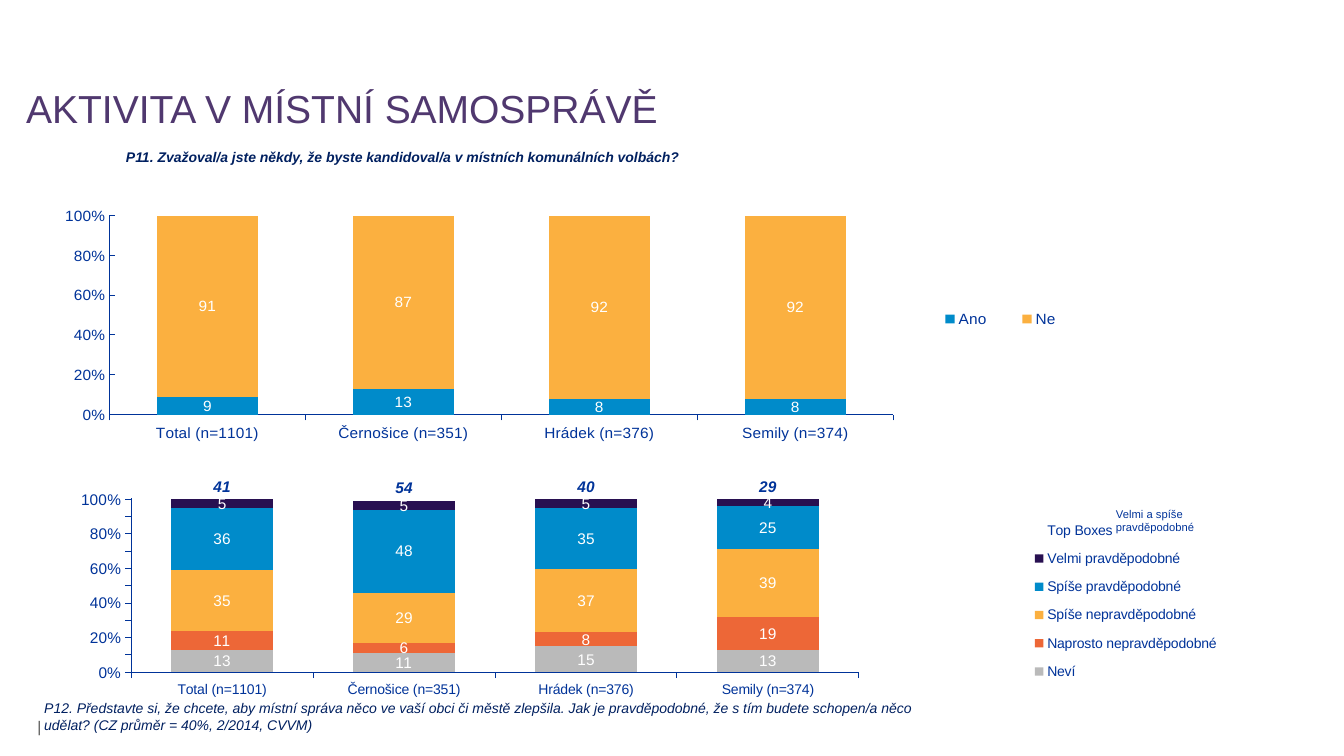
from dataclasses import dataclass

from lxml import etree
from pptx import Presentation
from pptx.chart.data import CategoryChartData
from pptx.dml.color import RGBColor
from pptx.enum.chart import XL_CHART_TYPE, XL_LABEL_POSITION, XL_LEGEND_POSITION, XL_TICK_MARK
from pptx.enum.text import MSO_ANCHOR, PP_ALIGN
from pptx.oxml.ns import qn
from pptx.util import Inches, Pt

STACKED = XL_CHART_TYPE.COLUMN_STACKED
STACKED_100 = XL_CHART_TYPE.COLUMN_STACKED_100
CENTER, INSIDE_BASE = XL_LABEL_POSITION.CENTER, XL_LABEL_POSITION.INSIDE_BASE
LEGEND_TOP, LEGEND_RIGHT = XL_LEGEND_POSITION.TOP, XL_LEGEND_POSITION.RIGHT
TICK_IN, TICK_OUT, TICK_NONE = XL_TICK_MARK.INSIDE, XL_TICK_MARK.OUTSIDE, XL_TICK_MARK.NONE
TOP, LEFT = MSO_ANCHOR.TOP, PP_ALIGN.LEFT
FONT = "Arial"
BLUE, NAVY, WHITE = "003399", "002060", "FFFFFF"
TOWNS = ["Total (n=1101)", "Černošice (n=351)", "Hrádek (n=376)", "Semily (n=374)"]

Box = tuple[float, float, float, float]


@dataclass
class Label:
    text: str
    box: Box
    size: float
    color: str
    bold: bool = False
    italic: bool = False
    insets: Box = (0.1, 0.05, 0.1, 0.05)
    wrap: bool = True


@dataclass
class Answer:
    name: str
    values: list[int]
    color: str | None


@dataclass
class StackedChart:
    kind: int
    box: Box
    plot: Box
    legend: Box
    legend_position: int
    answers: list[Answer]
    gap: int
    maximum: float
    step: float
    axis_format: str
    value_tick: int
    category_size: float
    legend_size: float


LABELS = [
    Label("|", (0.37, 7.11, 0.04, 0.19), 11, "575756", insets=(0, 0, 0, 0), wrap=False),
    Label("P11. Zvažoval/a jste někdy, že byste kandidoval/a v místních komunálních volbách?",
          (1.21, 1.47, 11.5, 0.21), 10, NAVY, bold=True, italic=True, insets=(0.04, 0, 0.04, 0.04)),
    Label("P12. Představte si, že chcete, aby místní správa něco ve vaší obci či městě zlepšila. "
          "Jak je pravděpodobné, že s tím budete schopen/a něco udělat? "
          "(CZ průměr = 40%, 2/2014, CVVM)",
          (0.34, 6.89, 8.92, 0.44), 10, NAVY, italic=True),
    Label("Velmi a spíše pravděpodobné", (10.97, 4.98, 1.31, 0.37), 8, BLUE),
]

CHARTS = [
    StackedChart(
        STACKED_100, (0.34, 1.73, 10.65, 2.65), (0.07, 0.16, 0.73, 0.77),
        (0.82, 0.51, 0.16, 0.1), LEGEND_TOP,
        [Answer("Ano", [9, 13, 8, 8], "008BCA"),
         Answer("Ne", [91, 87, 92, 92], "FBB040")],
        95, 1, 0.2, "0%", TICK_IN, 11, 11),
    StackedChart(
        STACKED, (0.58, 4.62, 12.03, 2.44), (0.06, 0.13, 0.6, 0.71),
        (0.78, 0.18, 0.2, 0.74), LEGEND_RIGHT,
        [Answer("Neví", [13, 11, 15, 13], "BABABA"),
         Answer("Naprosto nepravděpodobné", [11, 6, 8, 19], "ED6737"),
         Answer("Spíše nepravděpodobné", [35, 29, 37, 39], "FBB040"),
         Answer("Spíše pravděpodobné", [36, 48, 35, 25], "008BCA"),
         Answer("Velmi pravděpodobné", [5, 5, 5, 4], "281051"),
         Answer("Top Boxes", [41, 54, 40, 29], None)],
        79, 101, 10, '#,##0"%";\\-#,##0', TICK_OUT, 10, 10),
]


def rgb(value: str) -> RGBColor:
    return RGBColor.from_string(value)


def set_font(font, size: float, color: str, bold: bool = False, italic: bool = False) -> None:
    font.name = FONT
    font.size = Pt(size)
    font.color.rgb = rgb(color)
    font.bold = bold
    font.italic = italic


def fill_text(shape, label: Label) -> None:
    tf = shape.text_frame
    tf.text = label.text
    tf.word_wrap = label.wrap
    tf.vertical_anchor = TOP
    tf.margin_left, tf.margin_top, tf.margin_right, tf.margin_bottom = map(Inches, label.insets)
    p = tf.paragraphs[0]
    p.alignment = LEFT
    set_font(p.runs[0].font, label.size, label.color, label.bold, label.italic)


def manual_layout(parent, box: Box, inner: bool) -> etree._Element:
    for old in parent.findall(qn("c:layout")):
        parent.remove(old)
    layout = etree.Element(qn("c:layout"))
    manual = etree.SubElement(layout, qn("c:manualLayout"))
    entries = [("layoutTarget", "inner")] if inner else []
    entries += [("xMode", "edge"), ("yMode", "edge")]
    entries += list(zip("xywh", map(str, box)))
    for tag, value in entries:
        etree.SubElement(manual, qn(f"c:{tag}")).set("val", value)
    return layout


def style_axis(axis, size: float, tick: int) -> None:
    axis.has_major_gridlines = False
    axis.major_tick_mark = tick
    axis.minor_tick_mark = TICK_NONE
    axis.format.line.color.rgb = rgb(BLUE)
    axis.format.line.width = Pt(0.75)
    set_font(axis.tick_labels.font, size, BLUE)


def style_series(series, answer: Answer) -> None:
    labels = series.data_labels
    labels.show_value = True
    labels.number_format = "#,##0"
    labels.number_format_is_linked = False
    if answer.color:
        series.format.fill.solid()
        series.format.fill.fore_color.rgb = rgb(answer.color)
        labels.position = CENTER
        set_font(labels.font, 11, WHITE)
    else:
        series.format.fill.background()
        labels.position = INSIDE_BASE
        set_font(labels.font, 11, BLUE, bold=True, italic=True)


def add_stacked_chart(s, item: StackedChart) -> None:
    data = CategoryChartData()
    data.categories = TOWNS
    for answer in item.answers:
        data.add_series(answer.name, answer.values)
    chart = s.shapes.add_chart(item.kind, *map(Inches, item.box), data).chart
    chart.has_title = False
    set_font(chart.font, 11, BLUE)

    plot = chart.plots[0]
    plot.gap_width = item.gap
    plot.overlap = 100
    plot.vary_by_categories = False
    for series, answer in zip(plot.series, item.answers):
        style_series(series, answer)

    style_axis(chart.category_axis, item.category_size, TICK_OUT)
    axis = chart.value_axis
    style_axis(axis, 11, item.value_tick)
    axis.minimum_scale = 0
    axis.maximum_scale = item.maximum
    axis.major_unit = item.step
    axis.tick_labels.number_format = item.axis_format
    axis.tick_labels.number_format_is_linked = False

    chart.has_legend = True
    chart.legend.position = item.legend_position
    chart.legend.include_in_layout = False
    set_font(chart.legend.font, item.legend_size, BLUE)

    area = chart.element.find(".//" + qn("c:plotArea"))
    area.insert(0, manual_layout(area, item.plot, True))
    legend = chart.element.find(".//" + qn("c:legend"))
    legend.find(qn("c:legendPos")).addnext(manual_layout(legend, item.legend, False))


def main() -> None:
    prs = Presentation()
    prs.slide_width, prs.slide_height = Inches(13.33), Inches(7.5)
    s = prs.slides.add_slide(prs.slide_layouts[5])

    title = Label("AKTIVITA V MÍSTNÍ SAMOSPRÁVĚ", (0.26, 0.89, 11.55, 0.44), 27.9, "50386F",
                  insets=(0, 0, 0, 0))
    shape = s.shapes.title
    shape.left, shape.top, shape.width, shape.height = map(Inches, title.box)
    fill_text(shape, title)
    shape.text_frame.paragraphs[0].line_spacing = 0.9

    for item in CHARTS:
        add_stacked_chart(s, item)
    for label in LABELS:
        fill_text(s.shapes.add_textbox(*map(Inches, label.box)), label)

    prs.save("out.pptx")


if __name__ == "__main__":
    main()
